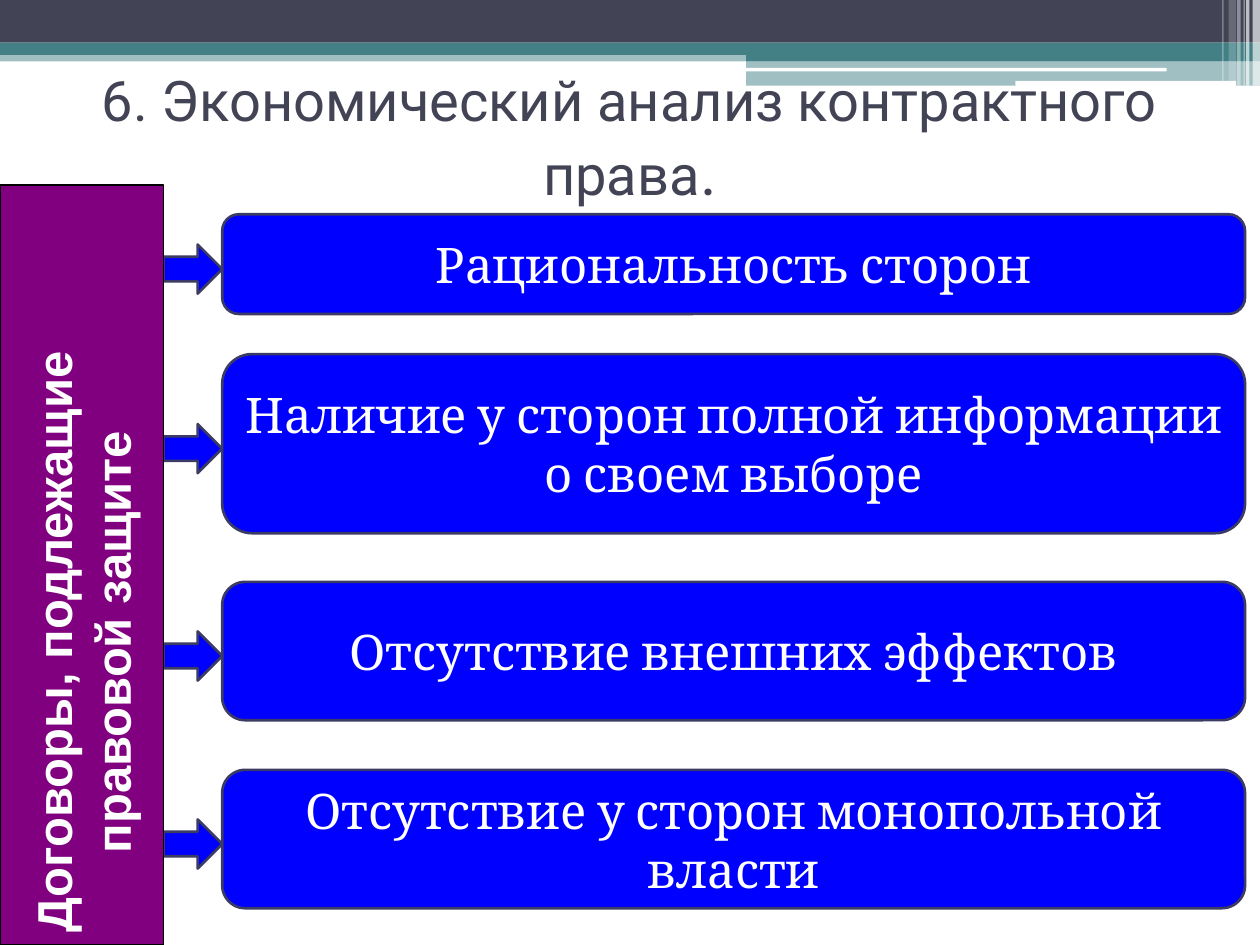
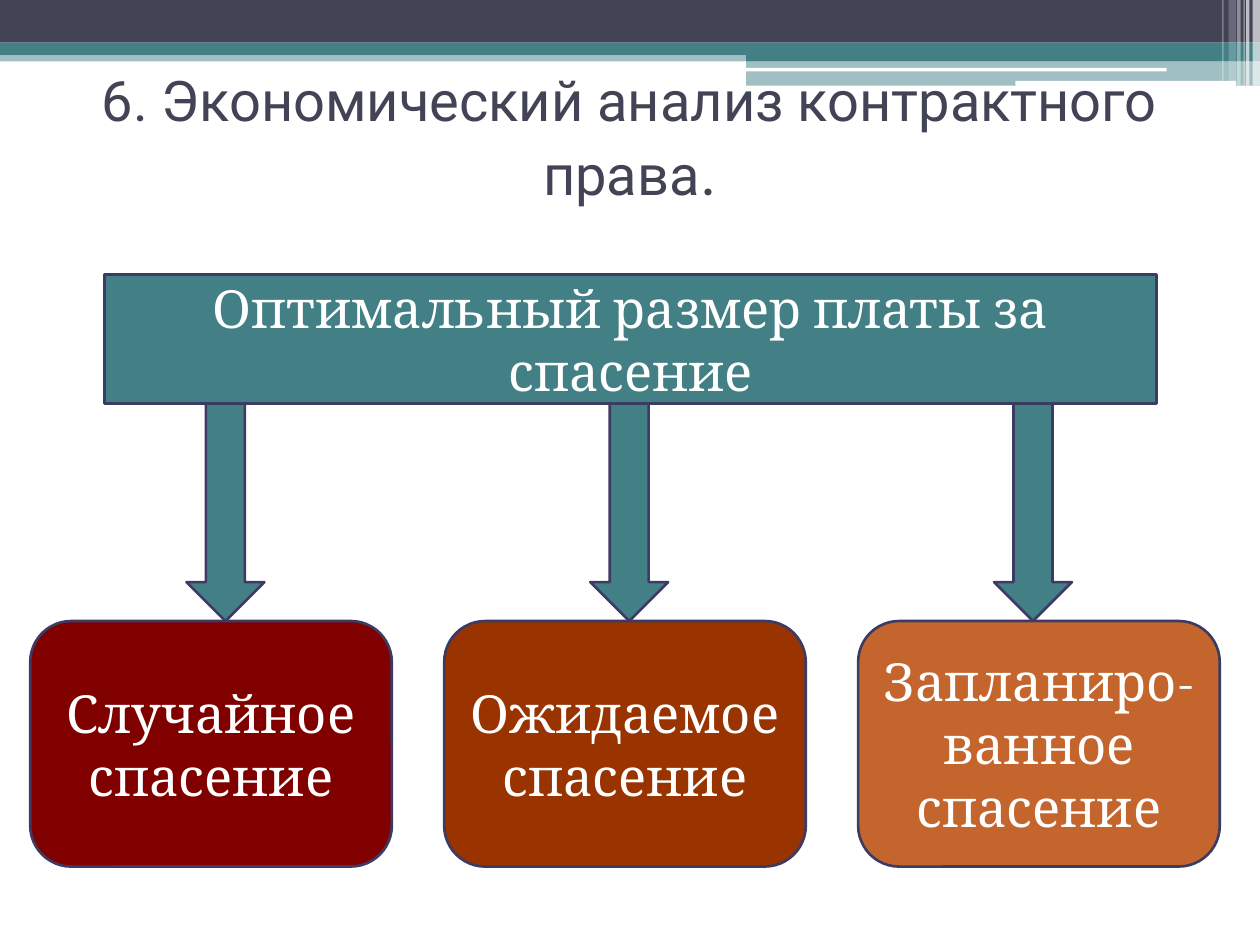
from lxml.etree import SubElement
from pptx import Presentation
from pptx.dml.color import RGBColor
from pptx.enum.shapes import MSO_SHAPE
from pptx.enum.text import MSO_ANCHOR, PP_ALIGN
from pptx.oxml.ns import qn
from pptx.util import Cm, Pt

WIDTH, HEIGHT = 25.4, 19.05
COLORS = {
    "navy": "424456", "teal": "438086", "white": "FFFFFF", "black": "000000",
    "blue": "0000FF", "purple": "800080", "outline": "3B3B64",
    "maroon": "800000", "rust": "993300", "orange": "C4652D",
}
TITLE = "6. Экономический анализ контрактного права"

# Header decoration: left, top, width, height, colour, opacity in percent
BANDS = [
    (0, 1.02, WIDTH, 0.22, "teal", 50),
    (0, 0, WIDTH, 0.86, "navy", 100),
    (0, 0.86, WIDTH, 0.25, "teal", 100),
    (15.04, 0.99, 10.36, 0.24, "teal", 100),
    (15.04, 1.23, 10.36, 0.5, "teal", 50),
]
WHITE_RULES = [(15.01, 1.37, 8.51, 0.07), (20.47, 1.63, 4.45, 0.1)]
# Corner stripes: left, width, height, opacity in percent
STRIPES = [
    (25.25, 0.15, 1.73, 65), (25.12, 0.07, 1.73, 65), (25.07, 0.02, 1.73, 60),
    (24.94, 0.07, 1.73, 40), (24.77, 0.15, 1.63, 20), (24.64, 0.03, 1.63, 30),
]


def rgb(name):
    return RGBColor.from_string(COLORS[name])


def add_block(s, kind, box, fill, opacity=100, line=None, line_width=1.5):
    sp = s.shapes.add_shape(kind, *[Cm(v) for v in box])
    sp.shadow.inherit = False
    sp.fill.solid()
    sp.fill.fore_color.rgb = rgb(fill)
    if opacity < 100:
        color = sp.fill._xPr.find(qn("a:solidFill"))[0]
        SubElement(color, qn("a:alpha")).set("val", str(opacity * 1000))
    if line:
        sp.line.color.rgb = rgb(line)
        sp.line.width = Pt(line_width)
    else:
        sp.line.fill.background()
    return sp


def write(sp, text, size, font="Cambria", color="white", bold=False):
    tf = sp.text_frame
    tf.word_wrap = True
    p = tf.paragraphs[0]
    p.alignment = PP_ALIGN.CENTER
    p.font.name = font
    p.font.size = Pt(size)
    p.font.bold = bold
    p.font.color.rgb = rgb(color)
    p.add_run().text = text
    return tf


def add_label(s, kind, box, fill, text, size, line="outline", line_width=1.5, **font):
    sp = add_block(s, kind, box, fill, line=line, line_width=line_width)
    tf = write(sp, text, size, **font)
    tf.vertical_anchor = MSO_ANCHOR.MIDDLE
    return sp


def add_header(s):
    for *box, color, opacity in BANDS:
        add_block(s, MSO_SHAPE.RECTANGLE, box, color, opacity)
    for box in WHITE_RULES:
        add_block(s, MSO_SHAPE.ROUNDED_RECTANGLE, box, "white")
    for left, width, height, opacity in STRIPES:
        add_block(s, MSO_SHAPE.RECTANGLE, (left, 0, width, height), "white", opacity)


def add_title(s, box):
    tb = s.shapes.add_textbox(*[Cm(v) for v in box])
    tf = write(tb, TITLE, 32, font="Roboto", color="navy")
    r = tf.paragraphs[0].add_run()
    r.text = "."
    r.font.size = Pt(36)


def new_slide(prs):
    s = prs.slides.add_slide(prs.slide_layouts[6])
    add_header(s)
    return s


def add_sidebar(s, box, text):
    # Vertical text turned to read from bottom to top
    sp = add_label(s, MSO_SHAPE.RECTANGLE, box, "purple", text, 28,
                   line="black", line_width=0.75, font="Arial", bold=True)
    sp.rotation = 180
    sp.text_frame._txBody.bodyPr.set("vert", "eaVert")


def add_condition(s, box, text):
    # Arrow from the sidebar into a rounded box
    left, top, width, height = box
    arrow_w, arrow_h, drop = 1.18, 0.99, 0.1
    sp = add_label(s, MSO_SHAPE.ROUNDED_RECTANGLE,
                   (left + arrow_w, top, width - arrow_w, height), "blue", text, 28)
    sp.text_frame.margin_left = sp.text_frame.margin_right = 0
    arrow_top = top + (height - arrow_h) / 2 + drop
    add_block(s, MSO_SHAPE.RIGHT_ARROW, (left, arrow_top, arrow_w, arrow_h),
              "blue", line="outline")


def add_rescue_tree(s, box, heading, cards):
    left, top, width, height = box
    banner_h, arrow_w, arrow_h = 2.59, 1.57, 4.39
    card_w = 7.29
    card_top = top + banner_h + arrow_h
    card_pitch = (width - card_w) / (len(cards) - 1)
    arrow_left, arrow_pitch = left + 3.15, 8.14

    # Arrows and cards
    for i, (text, color) in enumerate(cards):
        add_block(s, MSO_SHAPE.DOWN_ARROW,
                  (arrow_left + i * arrow_pitch, top + banner_h, arrow_w, arrow_h),
                  "teal", line="outline")
        add_label(s, MSO_SHAPE.ROUNDED_RECTANGLE,
                  (left + i * card_pitch, card_top, card_w, top + height - card_top),
                  color, text, 30)
    # Banner
    add_label(s, MSO_SHAPE.RECTANGLE, (left + 1.5, top, 21.21, banner_h),
              "teal", heading, 30)


def build_conditions_slide(prs):
    s = new_slide(prs)
    sidebar_w = 3.3
    conditions = [
        (4.32, 2.01, "Рациональность сторон"),
        (7.14, 3.61, "Наличие у сторон полной информации о своем выборе"),
        (11.73, 2.79, "Отсутствие внешних эффектов"),
        (15.52, 2.79, "Отсутствие у сторон монопольной власти"),
    ]
    for top, height, text in conditions:
        add_condition(s, (sidebar_w, top, 21.8, height), text)
    add_sidebar(s, (0, 3.73, sidebar_w, HEIGHT - 3.73),
                "Договоры, подлежащие правовой защите")
    add_title(s, (0, 1.19, WIDTH, 1.73))


def build_rescue_slide(prs):
    s = new_slide(prs)
    add_rescue_tree(s, (0.61, 5.54, 23.98, 11.93),
                    "Оптимальный размер платы за спасение",
                    [("Случайное спасение", "maroon"),
                     ("Ожидаемое спасение", "rust"),
                     ("Запланиро-ванное спасение", "orange")])
    add_title(s, (0, 1.19, WIDTH, 1.73))


def main():
    prs = Presentation()
    prs.slide_width, prs.slide_height = Cm(WIDTH), Cm(HEIGHT)
    build_conditions_slide(prs)
    build_rescue_slide(prs)
    prs.save("out.pptx")


if __name__ == "__main__":
    main()
